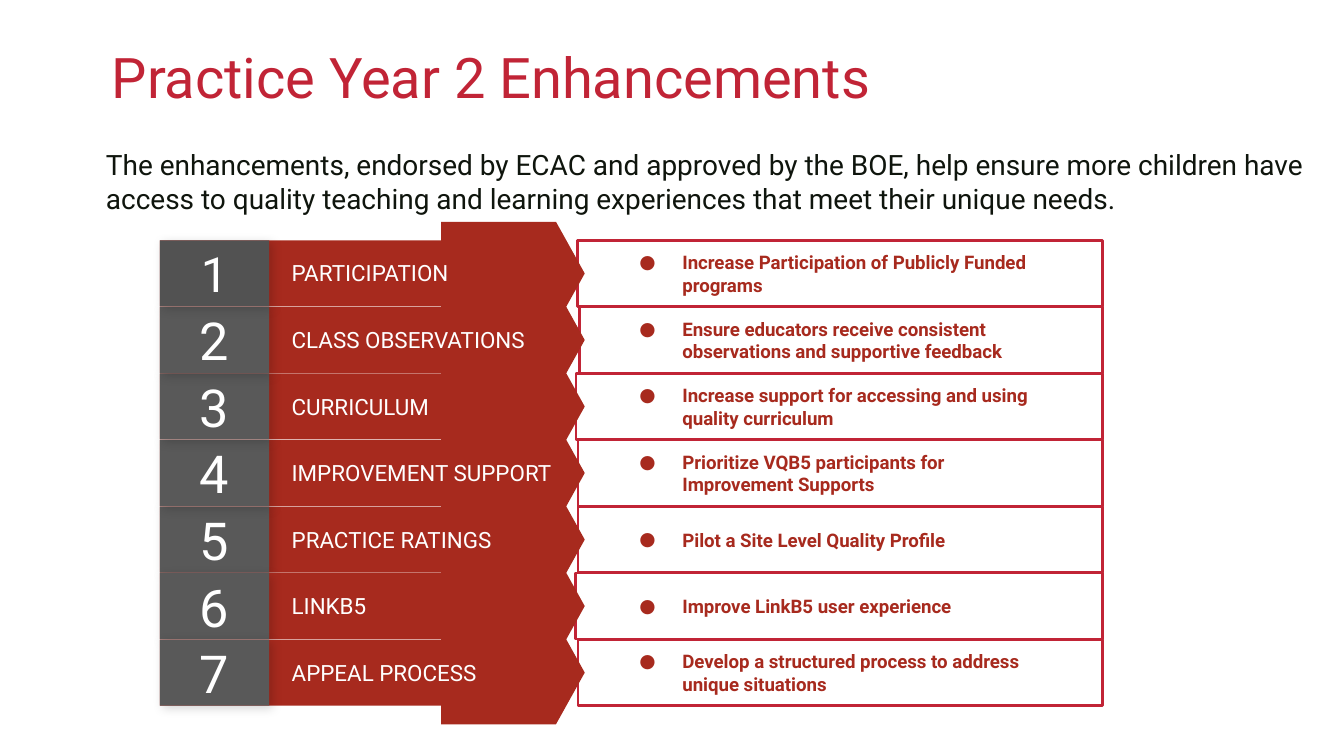
from lxml import etree
from pptx import Presentation
from pptx.dml.color import RGBColor
from pptx.enum.shapes import MSO_SHAPE
from pptx.enum.text import MSO_ANCHOR, PP_ALIGN
from pptx.oxml.ns import qn
from pptx.util import Pt

RECT = MSO_SHAPE.RECTANGLE
ARROW = MSO_SHAPE.FLOWCHART_OFFPAGE_CONNECTOR
TOP, MIDDLE = MSO_ANCHOR.TOP, MSO_ANCHOR.MIDDLE
LEFT, CENTER = PP_ALIGN.LEFT, PP_ALIGN.CENTER

FONT = "Roboto"
CRIMSON = RGBColor(0xC1, 0x24, 0x36)
BRICK = RGBColor(0xA7, 0x2A, 0x1E)
RUST = RGBColor(0xB0, 0x2C, 0x20)
GRAY = RGBColor(0x59, 0x59, 0x59)
DARK_GRAY = RGBColor(0x52, 0x52, 0x52)
INK = RGBColor(0x0F, 0x15, 0x0D)
WHITE = RGBColor(0xFF, 0xFF, 0xFF)

ROWS_TOP, ROW_PITCH, ROW_H = 128.8, 35.64, 35.4
NUMBER_X, NUMBER_W = 85.7, 58.5
BAND_X, BAND_W = 144.2, 156
ARROW_CENTER_X, ARROW_LENGTH, ARROW_SPAN = 274.8, 77, 55.4
BOX_RIGHT = 590.7
INSET = 7.2

# label, description, left edge of the description box
ENHANCEMENTS = [
    ("PARTICIPATION", "Increase Participation of Publicly Funded programs", 309.3),
    ("CLASS OBSERVATIONS",
     "Ensure educators receive consistent observations and supportive feedback", 310.3),
    ("CURRICULUM", "Increase support for accessing and using quality curriculum", 308.6),
    ("IMPROVEMENT SUPPORT", "Prioritize VQB5 participants for Improvement Supports", 309.6),
    ("PRACTICE RATINGS", "Pilot a Site Level Quality Profile", 309.6),
    ("LINKB5", "Improve LinkB5 user experience", 308.2),
    ("APPEAL PROCESS", "Develop a structured process to address unique situations", 309.6),
]
STACKING = [5, 4, 3, 2, 1, 6, 7]


def add_block(shapes, kind, x, y, w, h, fill, line=None):
    sp = shapes.add_shape(kind, Pt(x), Pt(y), Pt(w), Pt(h))
    sp.shadow.inherit = False
    sp.fill.solid()
    sp.fill.fore_color.rgb = fill
    if line is None:
        sp.line.fill.background()
    else:
        sp.line.color.rgb = line
        sp.line.width = Pt(1.5)
    return sp


def write(sp, text, size, color, anchor=MIDDLE, align=LEFT, bold=False,
          bullet=False, inset=(INSET, INSET)):
    """Fill a shape with one paragraph; inset is (horizontal, vertical)."""
    tf = sp.text_frame
    tf.word_wrap = True
    tf.vertical_anchor = anchor
    tf.margin_left = tf.margin_right = Pt(inset[0])
    tf.margin_top = tf.margin_bottom = Pt(inset[1])
    tf.text = text
    p = tf.paragraphs[0]
    p.alignment = align
    if bullet:
        add_bullet(p, color)
    font = p.runs[0].font
    font.name, font.size, font.bold = FONT, Pt(size), bold
    font.color.rgb = color
    return p


def add_bullet(p, color):
    pPr = p._p.get_or_add_pPr()
    pPr.set("marL", str(Pt(36)))
    pPr.set("indent", str(Pt(-23)))
    clr = etree.SubElement(pPr, qn("a:buClr"))
    etree.SubElement(clr, qn("a:srgbClr"), val=str(color))
    etree.SubElement(pPr, qn("a:buFont"), typeface=FONT)
    etree.SubElement(pPr, qn("a:buChar"), char="●")


def add_text(shapes, x, y, w, h, text, size, color, **options):
    sp = shapes.add_textbox(Pt(x), Pt(y), Pt(w), Pt(h))
    return write(sp, text, size, color, **options)


def add_soft_shadow(sp):
    effects = sp._element.spPr.find(qn("a:effectLst"))
    shadow = etree.SubElement(effects, qn("a:outerShdw"), blurRad=str(Pt(5.6)),
                              dist=str(Pt(2.2)), dir="2700000", algn="tl",
                              rotWithShape="0")
    clr = etree.SubElement(shadow, qn("a:srgbClr"), val="000000")
    etree.SubElement(clr, qn("a:alpha"), val="17000")


def add_enhancement(slide, number):
    label, description, box_x = ENHANCEMENTS[number - 1]
    y = ROWS_TOP + (number - 1) * ROW_PITCH
    shapes = slide.shapes.add_group_shape().shapes

    add_block(shapes, RECT, box_x, y, BOX_RIGHT - box_x, ROW_H, WHITE, CRIMSON)
    add_block(shapes, RECT, BAND_X, y, BAND_W, ROW_H, BRICK)
    arrow = add_block(shapes, ARROW, ARROW_CENTER_X - ARROW_SPAN / 2,
                      y + (ROW_H - ARROW_LENGTH) / 2, ARROW_SPAN, ARROW_LENGTH, BRICK)
    arrow.rotation = 270
    add_text(shapes, 149.2, y + 4.2, 164, 26.6, label, 12, WHITE)

    backing = add_block(shapes, RECT, NUMBER_X, y, NUMBER_W, ROW_H, RUST)
    add_soft_shadow(backing)
    fill, size = (DARK_GRAY, 26) if number == 1 else (GRAY, 28)
    tile = add_block(shapes, RECT, NUMBER_X, y, NUMBER_W, ROW_H, fill)
    write(tile, str(number), size, WHITE, align=CENTER)
    add_text(shapes, 322.5, y, 252, ROW_H, description, 10, BRICK,
             bold=True, bullet=True)


def main():
    prs = Presentation()
    prs.slide_width, prs.slide_height = Pt(720), Pt(405)
    slide = prs.slides.add_slide(prs.slide_layouts[6])

    title = add_text(slide.shapes, 54.7, 3.6, 620.6, 78.5,
                     "Practice Year 2 Enhancements", 30, CRIMSON, inset=(5.2, 2.6))
    title.line_spacing = 0.9
    for number in STACKING:
        add_enhancement(slide, number)
    add_text(slide.shapes, 49.7, 72, 656.6, 51.1,
             "The enhancements, endorsed by ECAC and approved by the BOE, help ensure "
             "more children have access to quality teaching and learning experiences "
             "that meet their unique needs.", 15, INK, anchor=TOP)
    prs.save("out.pptx")


if __name__ == "__main__":
    main()
